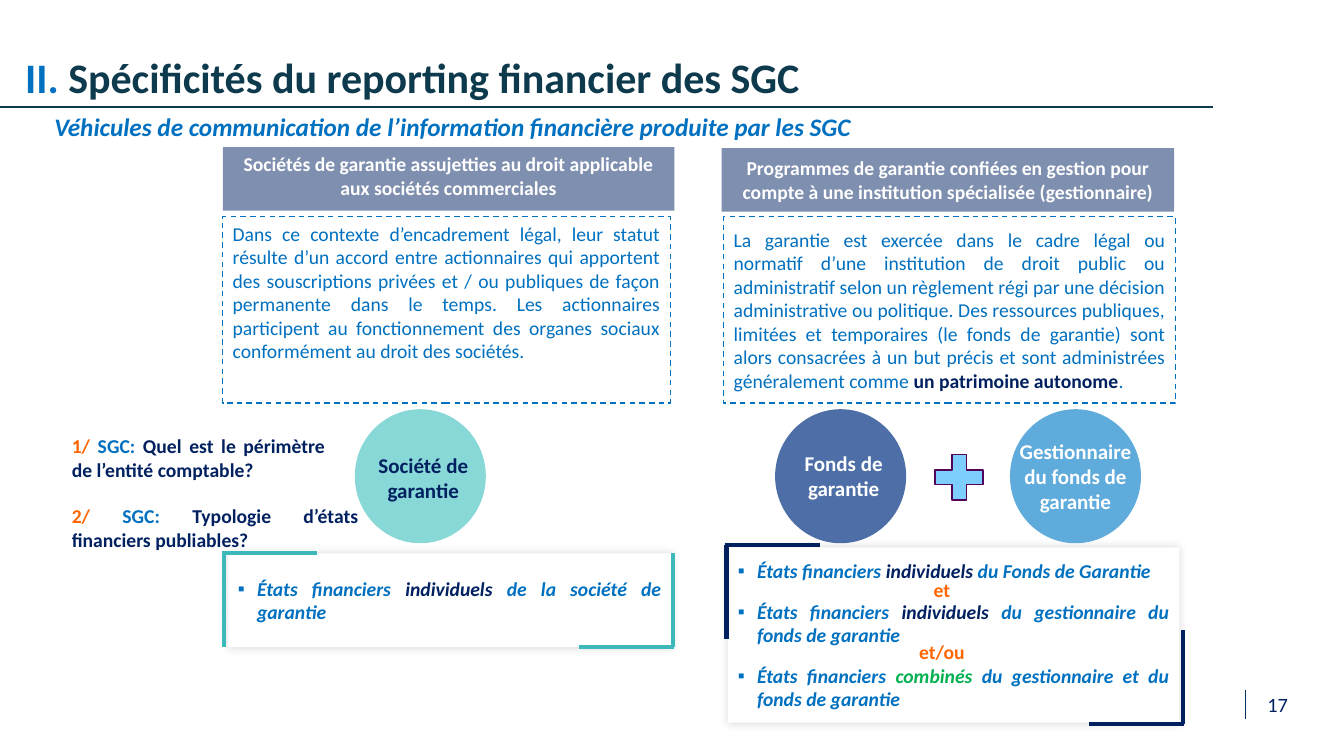
from dataclasses import dataclass

from lxml import etree
from pptx import Presentation, util as u
from pptx.dml.color import RGBColor
from pptx.enum import dml, shapes, text
from pptx.oxml import ns

AL, ANC, FORM = text.PP_ALIGN, text.MSO_ANCHOR, shapes.MSO_SHAPE


@dataclass(frozen=True)
class Theme:
    """Colours, type sizes and font of the slide."""
    font: str = "Calibri"
    blue: str = "0070C0"
    navy: str = "002060"
    deep: str = "0E3A4D"
    teal: str = "3DB9B9"
    mint: str = "88D8D8"
    sky: str = "5FABDC"
    steel: str = "2F5597"
    orange: str = "FF6600"
    green: str = "00B050"
    white: str = "FFFFFF"
    plus: str = "7ECEFD"
    plum: str = "52025A"
    rule: str = "003062"
    shade: str = "404040"
    head: float = 30
    sub: float = 18
    label: float = 15
    body: float = 14
    page: float = 14.5


T = Theme()
WIDE, HIGH = u.Inches(13.333), u.Inches(7.5)
COLS, ROWS = 40, 22.5


def col(n):
    """Return the length of n grid columns."""
    return round(WIDE * n / COLS)


def row(n):
    """Return the length of n grid rows."""
    return round(HIGH * n / ROWS)


def rect(x, y, w, h):
    """Return left, top, width and height of a grid area."""
    return col(x), row(y), col(w), row(h)


def rgb(hue):
    """Return a colour object for a hex code."""
    return RGBColor.from_string(hue)


def sub(parent, tag, **attrs):
    """Append a drawing element with the given attributes."""
    return etree.SubElement(parent, ns.qn("a:" + tag), {k: str(v) for k, v in attrs.items()})


def bullet(par):
    """Give a paragraph a square bullet, a hanging indent and spacing."""
    prop = par._p.get_or_add_pPr()
    prop.set("marL", str(u.Inches(0.19)))
    prop.set("indent", str(-u.Inches(0.19)))
    sub(prop, "buChar", char="▪")
    par.space_before = par.space_after = u.Pt(6)


def write(shape, paras, size=T.body, align=AL.JUSTIFY, anchor=ANC.TOP,
          bold=True, italic=False, dots=False):
    """Fill a shape with paragraphs of (text, colour[, bold]) runs."""
    frame = shape.text_frame
    frame.word_wrap, frame.auto_size = True, text.MSO_AUTO_SIZE.NONE
    frame.vertical_anchor = anchor
    for i, runs in enumerate(paras):
        par = frame.add_paragraph() if i else frame.paragraphs[0]
        par.alignment = align
        if dots:
            bullet(par)
        font = par.font
        font.name, font.size = T.font, u.Pt(size)
        font.bold, font.italic = bold, italic
        for words, hue, *heavy in runs:
            run = par.add_run()
            run.text = words
            run.font.color.rgb = rgb(hue)
            if heavy:
                run.font.bold = heavy[0]


def note(slide, area, *runs, **style):
    """Add a text box of one paragraph."""
    write(slide.shapes.add_textbox(*rect(*area)), [runs], **style)


def form(slide, kind, area, fill=None, alpha=100, line=None, dash=False):
    """Add a preset shape with an optional fill and outline."""
    shape = slide.shapes.add_shape(kind, *rect(*area))
    shape.shadow.inherit = False
    if fill:
        shape.fill.solid()
        shape.fill.fore_color.rgb = rgb(fill)
        if alpha < 100:
            sub(shape.fill._xPr.find(".//" + ns.qn("a:srgbClr")), "alpha", val=alpha * 1000)
    else:
        shape.fill.background()
    if line:
        shape.line.color.rgb, shape.line.width = rgb(line), u.Pt(1)
        if dash:
            shape.line.dash_style = dml.MSO_LINE.DASH
    else:
        shape.line.fill.background()
    return shape


def stroke(slide, x1, y1, x2, y2, hue, width):
    """Draw a straight line between two grid points."""
    line = slide.shapes.add_connector(
        shapes.MSO_CONNECTOR.STRAIGHT, col(x1), row(y1), col(x2), row(y2))
    line.line.color.rgb, line.line.width = rgb(hue), u.Pt(width)
    sub(line._element.spPr, "effectLst")


def column(slide, head, box, title, runs, anchor):
    """Add a header band and the dashed text box beneath it."""
    band = form(slide, FORM.RECTANGLE, head, T.navy, 50)
    write(band, [[(title, T.white)]], align=AL.CENTER, anchor=anchor)
    shape = form(slide, FORM.RECTANGLE, box, line=T.blue, dash=True)
    write(shape, [runs], anchor=anchor, bold=False)


def circle(slide, x, fill, alpha, words, hue, shift, top, high):
    """Add a circle and its label."""
    form(slide, FORM.OVAL, (x, 12.18, 3.9, 3.99), fill, alpha)
    note(slide, (x + shift, top, 4.08, high), (words, hue), size=T.label, align=AL.CENTER)


def card(slide, hold, area, edge, hue, items):
    """Format a body placeholder as a shadowed card with corner brackets."""
    hold.left, hold.top, hold.width, hold.height = rect(*area)
    hold.fill.solid()
    hold.fill.fore_color.rgb = rgb(T.white)
    glow = sub(sub(hold._element.spPr, "effectLst"), "outerShdw",
               blurRad=u.Pt(6), dist=0, dir=0, algn="ctr", rotWithShape=0)
    sub(sub(glow, "srgbClr", val=T.shade), "alpha", val=20000)
    paras = [[("États financiers ", T.blue), (key, tint), (rest, T.blue)]
             for key, tint, rest in items]
    write(hold, paras, anchor=ANC.MIDDLE, italic=True, dots=True)
    x1, y1, x2, y2 = edge
    for x, y, way in ((x1, y1, 1), (x2, y2, -1)):
        stroke(slide, x, y, x, y + way * 2.8, hue, 3)
        stroke(slide, x - way * 0.05, y, x + way * 2.78, y, hue, 3)


def main():
    """Build and save the slide."""
    deck = Presentation()
    deck.slide_width, deck.slide_height = WIDE, HIGH
    slide = deck.slides.add_slide(deck.slide_layouts[3])
    title, left, right = slide.placeholders

    title.left, title.top, title.width, title.height = rect(0.45, 1.53, 34.5, 1.68)
    write(title, [[("II. ", T.blue), ("Spécificités du reporting financier des SGC", T.deep)]],
          size=T.head, align=AL.LEFT, anchor=ANC.MIDDLE)
    title.text_frame.paragraphs[0].line_spacing = 0.9
    stroke(slide, 0, 3.18, 36.09, 3.18, T.deep, 1.5)
    note(slide, (1.32, 3.18, 30.75, 1.2),
         ("Véhicules de communication de l’information financière produite par les SGC", T.blue),
         size=T.sub, italic=True)

    column(slide, (6.63, 4.38, 13.44, 1.89), (6.63, 6.45, 13.32, 5.55),
           "Sociétés de garantie assujetties au droit applicable aux sociétés commerciales",
           [("Dans ce contexte d’encadrement légal, leur statut résulte d’un accord entre "
             "actionnaires qui apportent des souscriptions privées et / ou publiques de façon "
             "permanente dans le temps. Les actionnaires participent au fonctionnement des "
             "organes sociaux conformément au droit des sociétés.", T.blue)], ANC.TOP)
    column(slide, (21.48, 4.41, 13.47, 1.89), (21.54, 6.45, 13.44, 5.55),
           "Programmes de garantie confiées en gestion pour compte à une institution "
           "spécialisée (gestionnaire)",
           [("La garantie est exercée dans le cadre légal ou normatif d’une institution de droit "
             "public ou administratif selon un règlement régi par une décision administrative ou "
             "politique. Des ressources publiques, limitées et temporaires (le fonds de garantie) "
             "sont alors consacrées à un but précis et sont administrées généralement comme ",
             T.blue), ("un patrimoine autonome", T.navy, True), (".", T.blue)], ANC.MIDDLE)

    circle(slide, 10.56, T.mint, 100, "Société de garantie", T.navy, 0, 13.32, 1.83)
    circle(slide, 23.07, T.steel, 85, "Fonds de garantie", T.white, 0, 13.26, 1.83)
    circle(slide, 30.06, T.sky, 100, "Gestionnaire du fonds de garantie", T.white,
           -0.09, 12.9, 2.58)
    form(slide, FORM.MATH_PLUS, (27.57, 13.29, 1.95, 1.83), T.plus, line=T.plum)

    own = "individuels", T.navy
    card(slide, left, (6.78, 16.47, 13.2, 2.79), (6.66, 16.47, 20.02, 19.26), T.teal,
         [(*own, " de la société de garantie")])
    card(slide, right, (21.66, 16.29, 13.44, 5.22), (21.62, 16.22, 35.2, 21.54), T.navy,
         [(*own, " du Fonds de Garantie"),
          (*own, " du gestionnaire du fonds de garantie"),
          ("combinés", T.green, " du gestionnaire et du fonds de garantie")])
    for word, y in (("et", 17.04), ("et/ou", 18.9)):
        note(slide, (26.97, y, 2.13, 1.02), (word, T.orange), align=AL.CENTER)

    for mark, ask, y, w in (
            ("1/", " Quel est le périmètre de l’entité comptable?", 12.78, 8.13),
            ("2/", " Typologie d’états financiers publiables?", 14.85, 9.12)):
        note(slide, (1.84, y, w, 1.71), (mark, T.orange), (" SGC:", T.blue), (ask, T.navy))

    note(slide, (36.15, 20.46, 3.75, 0.93), ("17", T.navy),
         size=T.page, align=AL.CENTER, bold=False)
    stroke(slide, 37.08, 20.55, 37.08, 21.39, T.rule, 0.5)
    deck.save("out.pptx")


if __name__ == "__main__":
    main()
